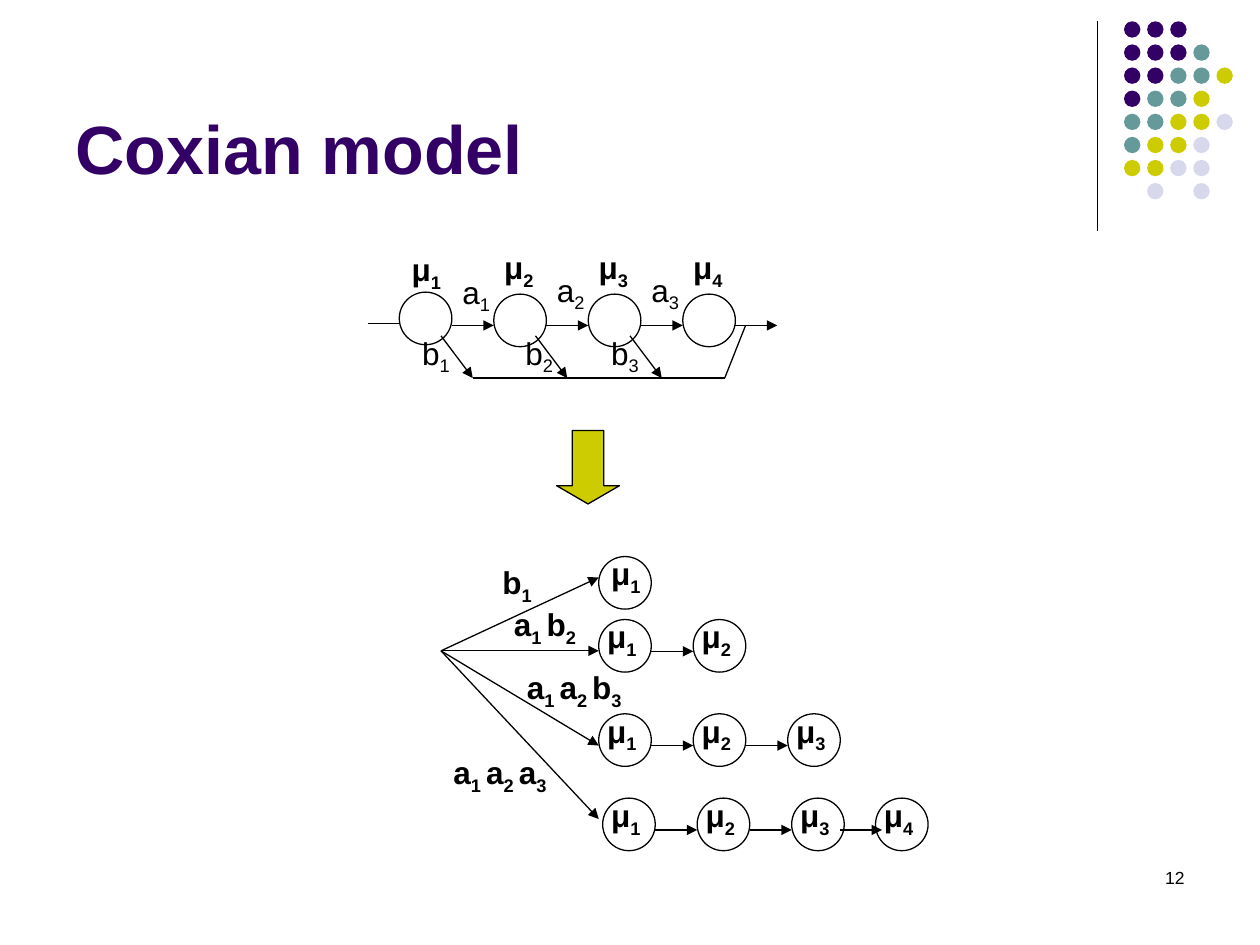
"""Build a slide that unfolds a Coxian model into its parallel branches."""
import itertools
from dataclasses import dataclass

import lxml.etree
import pptx
import pptx.dml.color
import pptx.enum.shapes
import pptx.enum.text
import pptx.oxml.ns
import pptx.util

Cm = pptx.util.Cm
Kind = pptx.enum.shapes.MSO_SHAPE


@dataclass(frozen=True)
class Theme:
    """Colours, type sizes and line width of the slide."""
    font: str = "Arial"
    ink: str = "000000"
    plum: str = "330066"
    teal: str = "669999"
    lime: str = "CCCC00"
    pale: str = "D8D8EC"
    title: int = 39
    label: int = 18
    small: int = 10
    line: float = 0.75


THEME = Theme()
SIZE = 1.06
PITCH = 7.62 / 4
DOTS = ("PPP", "PPPT", "PPTTY", "PTTY", "TTYYL", "TYYL", "YYLL", " L L")


def rgb(value):
    """Turn a hex string into a colour."""
    return pptx.dml.color.RGBColor.from_string(value)


def write(frame, text, size=THEME.label, bold=False, color=THEME.ink,
          align="LEFT", sub=False):
    """Write text in a frame, lowering its digits when sub is set."""
    para = frame.paragraphs[0]
    para.alignment = getattr(pptx.enum.text.PP_ALIGN, align)
    for low, chars in itertools.groupby(text, lambda c: sub and not c.isalpha()):
        run = para.add_run()
        run.text = "".join(chars)
        run.font.name = THEME.font
        run.font.size = pptx.util.Pt(size)
        run.font.bold = bold
        run.font.color.rgb = rgb(color)
        if low:
            run._r.get_or_add_rPr().set("baseline", "-25000")


def label(slide, text, x, y, width=1.14, bold=True):
    """Add a symbol with subscripts."""
    frame = slide.shapes.add_textbox(Cm(x), Cm(y), Cm(width), Cm(1.02)).text_frame
    frame.word_wrap = False
    frame.auto_size = pptx.enum.text.MSO_AUTO_SIZE.SHAPE_TO_FIT_TEXT
    write(frame, text, bold=bold, sub=True)


def shape(slide, kind, x, y, width, height, fill=None, line=True):
    """Add a preset shape with optional fill and outline."""
    item = slide.shapes.add_shape(kind, Cm(x), Cm(y), Cm(width), Cm(height))
    item.shadow.inherit = False
    if fill:
        item.fill.solid()
        item.fill.fore_color.rgb = rgb(fill)
    else:
        item.fill.background()
    if line:
        item.line.color.rgb = rgb(THEME.ink)
        item.line.width = pptx.util.Pt(THEME.line)
    else:
        item.line.fill.background()
    return item


def link(slide, start, end, arrow=True):
    """Join two points with a line or an arrow."""
    ends = [Cm(v) for v in (*start, *end)]
    item = slide.shapes.add_connector(
        pptx.enum.shapes.MSO_CONNECTOR.STRAIGHT, *ends)
    item.line.color.rgb = rgb(THEME.ink)
    item.line.width = pptx.util.Pt(THEME.line)
    qn = pptx.oxml.ns.qn
    if arrow:
        lxml.etree.SubElement(
            item.line._get_or_add_ln(), qn("a:tailEnd"), type="triangle")
    lxml.etree.SubElement(item._element.spPr, qn("a:effectLst"))


def node(slide, x, y):
    """Add an empty stage circle."""
    shape(slide, Kind.OVAL, x, y, SIZE, SIZE)


def decor(slide):
    """Draw the corner dots and their rule."""
    link(slide, (22.12, 0.43), (22.12, 4.65), arrow=False)
    fills = {"P": THEME.plum, "T": THEME.teal, "Y": THEME.lime, "L": THEME.pale}
    gap = 3.26 / 7
    for row, marks in enumerate(DOTS):
        for col, mark in enumerate(marks):
            if mark in fills:
                shape(slide, Kind.OVAL, 22.66 + col * gap, 0.43 + row * gap,
                      0.33, 0.33, fill=fills[mark], line=False)


def model(slide):
    """Draw the serial model with its early exits."""
    left, axis, base = 8.05, 6.56, 7.62
    link(slide, (7.41, 6.52), (left, 6.52), arrow=False)
    for i in range(4):
        x = left + i * PITCH
        lift = 0 if i else 0.04
        node(slide, x, 5.93 - lift)
        label(slide, f"μ{i + 1}", x - 0.04 + lift, 4.87 + lift)
        link(slide, (x + SIZE, axis), (x + PITCH, axis))
        if i < 3:
            link(slide, (x + 0.84, 6.77), (x + 1.48, base))
            label(slide, f"a{i + 1}", x + 1.02, 5.33 + lift, 1.09, bold=False)
    for i, x in enumerate((8.26, 10.34, 12.07), 1):
        label(slide, f"b{i}", x, 6.6, 1.09, bold=False)
    link(slide, (9.53, base), (14.61, base), arrow=False)
    link(slide, (14.61, base), (15.03, axis), arrow=False)


def chain(slide, x, y, count, shift=-0.08):
    """Draw a row of joined, labelled stages."""
    for i in range(count):
        left = x + i * PITCH
        node(slide, left, y)
        label(slide, f"μ{i + 1}", left + shift, y - 0.17)
        if i:
            link(slide, (left - PITCH + SIZE, y + 0.64), (left, y + 0.64))


def fan(slide):
    """Draw the branches of the unfolded model."""
    for end in (11.64, 13.12, 15.03, 16.51):
        link(slide, (8.89, 13.12), (12.07, end))
    chain(slide, 12.07, 11.22, 1, shift=0)
    chain(slide, 12.07, 12.49, 2)
    chain(slide, 12.07, 14.39, 3)
    chain(slide, 12.15, 16.09, 3)
    node(slide, 17.65, 16.09)
    label(slide, "μ4", 17.57, 15.92)
    link(slide, (16.93, 16.73), (17.78, 16.73))
    for text, x, y, width in (("b1", 9.88, 11.22, 1.14),
                              ("a1 b2", 10.11, 12.07, 1.83),
                              ("a1 a2 b3", 10.37, 13.34, 2.54),
                              ("a1 a2 a3", 8.89, 15.06, 2.51)):
        label(slide, text, x, y, width)


def head(slide):
    """Fill and place the title."""
    item = slide.shapes.title
    item.left, item.top, item.width, item.height = (
        Cm(v) for v in (1.27, 0.33, 20.96, 3.6))
    frame = item.text_frame
    frame.auto_size = pptx.enum.text.MSO_AUTO_SIZE.NONE
    frame.vertical_anchor = pptx.enum.text.MSO_ANCHOR.BOTTOM
    write(frame, "Coxian model", size=THEME.title, bold=True, color=THEME.plum)


def main():
    """Build and save the slide."""
    deck = pptx.Presentation()
    deck.slide_width, deck.slide_height = Cm(25.4), Cm(19.05)
    slide = deck.slides.add_slide(deck.slide_layouts[5])
    decor(slide)
    head(slide)
    model(slide)
    arrow = shape(slide, Kind.DOWN_ARROW, 11.22, 8.68, 1.27, 1.48, fill=THEME.lime)
    arrow.adjustments[1] = 0.29
    fan(slide)
    page = slide.shapes.add_textbox(Cm(18.2), Cm(17.36), Cm(5.93), Cm(1.27))
    page.text_frame.word_wrap = True
    write(page.text_frame, "12", size=THEME.small, align="RIGHT")
    deck.save("out.pptx")


if __name__ == "__main__":
    main()
